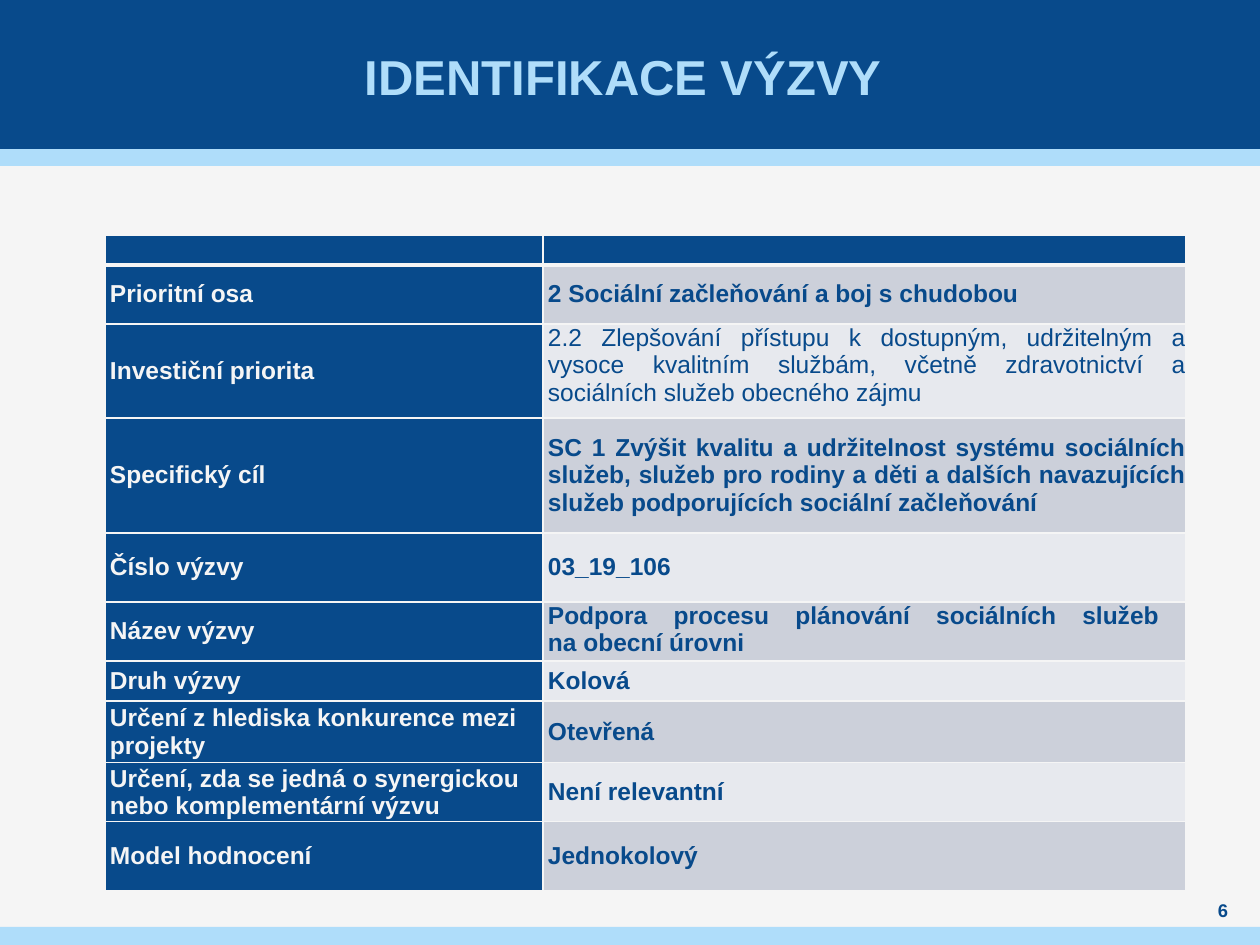
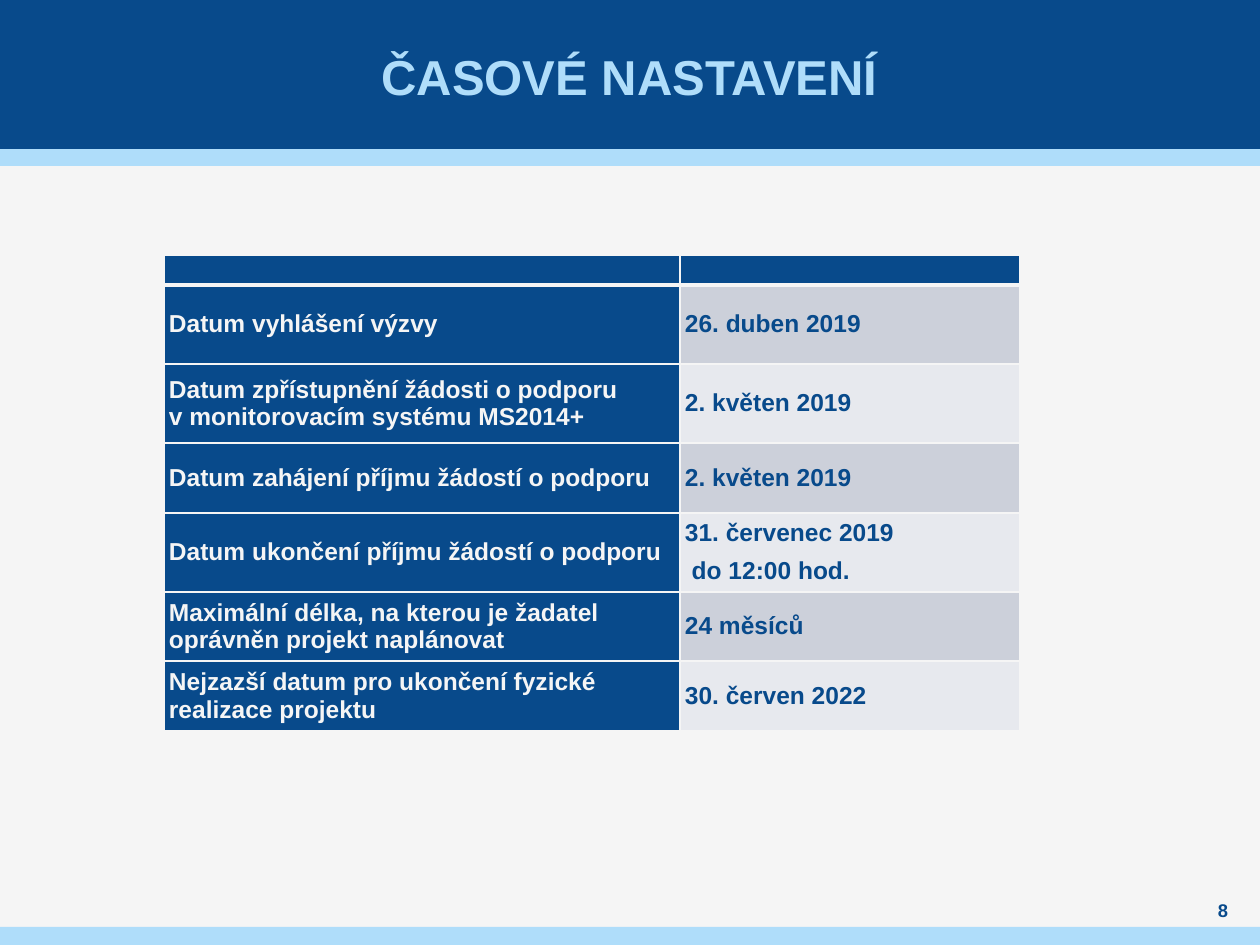
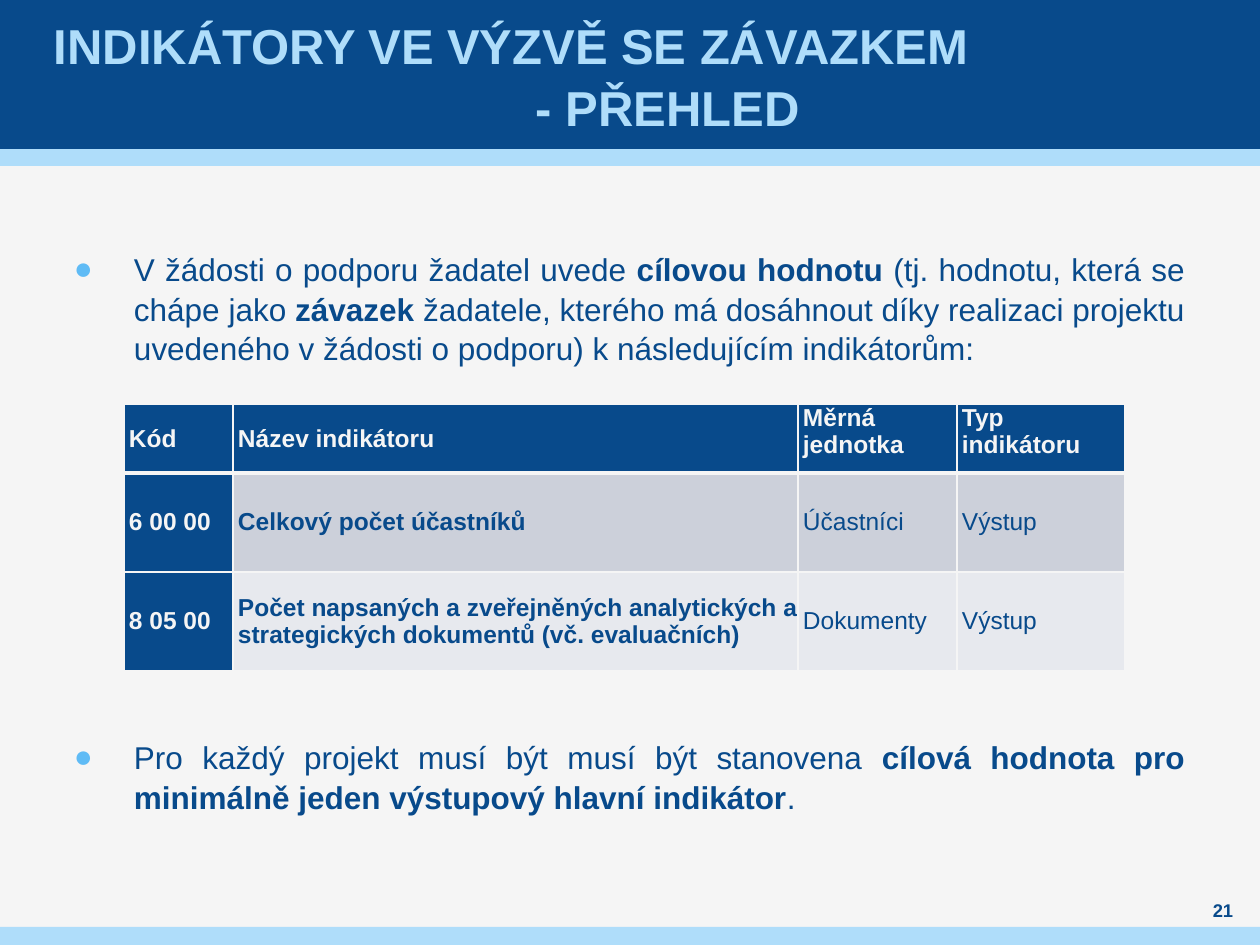
from collections import namedtuple
from dataclasses import dataclass

from lxml.etree import SubElement
from pptx import Presentation
from pptx.dml.color import RGBColor
from pptx.enum.shapes import MSO_SHAPE
from pptx.enum.text import MSO_ANCHOR, PP_ALIGN
from pptx.oxml.ns import qn
from pptx.util import Emu, Pt


@dataclass(frozen=True)
class Theme:
    font: str = "Arial"
    paper: str = "F5F5F5"
    navy: str = "084A8B"
    sky: str = "AFDDFA"
    dot: str = "5FBBF5"
    odd: str = "CCD0DA"
    even: str = "E7E9EE"
    title: float = 28
    body: float = 18
    cell: float = 14
    number: float = 10.5
    thin: float = 1
    thick: float = 3
    lead: float = 1.05


T = Theme()
WIDE, HIGH = 1260, 945
Cell = namedtuple("Cell", "text bold top just", defaults=(True, False, False))

# Content: title lines are (text, indent); None centres the line
SLIDES = [
    {
        "title": [("IDENTIFIKACE VÝZVY ", None)],
        "number": "6",
        "table": {
            "at": (105, 235),
            "cols": [438, 643],
            "rows": [30, 59, 94, 115, 69, 59, 40, 62, 59, 69],
            "cells": [
                ["", ""],
                ["Prioritní osa",
                 Cell("2 Sociální začleňování a boj s chudobou", just=True)],
                ["Investiční priorita",
                 Cell("2.2 Zlepšování přístupu k dostupným, udržitelným "
                      "a vysoce kvalitním službám, včetně zdravotnictví "
                      "a sociálních služeb obecného zájmu",
                      bold=False, top=True, just=True)],
                ["Specifický cíl",
                 Cell("SC 1 Zvýšit kvalitu a udržitelnost systému sociálních "
                      "služeb, služeb pro rodiny a děti a dalších navazujících "
                      "služeb podporujících sociální začleňování", just=True)],
                ["Číslo výzvy", Cell("03_19_106", just=True)],
                ["Název výzvy",
                 Cell("Podpora procesu plánování sociálních služeb \v"
                      "na obecní úrovni ", top=True, just=True)],
                ["Druh výzvy", "Kolová"],
                ["Určení z hlediska konkurence mezi projekty", "Otevřená"],
                ["Určení, zda se jedná o synergickou nebo komplementární výzvu",
                 "Není relevantní"],
                ["Model hodnocení", "Jednokolový"],
            ],
        },
    },
    {
        "title": [("ČASOVÉ NASTAVENÍ", None)],
        "number": "8",
        "table": {
            "at": (164, 255),
            "cols": [516, 340],
            "rows": [30, 79, 79, 70, 79, 69, 70],
            "cells": [
                ["", ""],
                ["Datum vyhlášení výzvy", "26. duben 2019"],
                ["Datum zpřístupnění žádosti o podporu \v"
                 "v monitorovacím systému MS2014+", "2. květen 2019"],
                ["Datum zahájení příjmu žádostí o podporu", "2. květen 2019"],
                ["Datum ukončení příjmu žádostí o podporu",
                 "31. červenec 2019\n do 12:00 hod."],
                ["Maximální délka, na kterou je žadatel oprávněn projekt "
                 "naplánovat", "24 měsíců"],
                ["Nejzazší datum pro ukončení fyzické realizace projektu",
                 "30. červen 2022"],
            ],
        },
    },
    {
        "title": [("INDIKÁTORY VE VÝZVĚ SE ZÁVAZKEM", 0), ("- PŘEHLED", 482)],
        "number": "21",
        "table": {
            "at": (124, 404),
            "cols": [109, 565, 159, 168],
            "rows": [69, 99, 99],
            "cells": [
                ["Kód", "Název indikátoru", Cell("Měrná jednotka", top=True),
                 Cell("Typ indikátoru", top=True)],
                ["6 00 00", "Celkový počet účastníků",
                 Cell("Účastníci", bold=False), Cell("Výstup", bold=False)],
                ["8 05 00", "Počet napsaných a zveřejněných analytických "
                 "a strategických dokumentů (vč. evaluačních)",
                 Cell("Dokumenty", bold=False), Cell("Výstup", bold=False)],
            ],
        },
        # Bullets: top, height, runs of (text, bold)
        "points": [
            (248, 120, [
                ("V žádosti o podporu žadatel uvede ", False),
                ("cílovou hodnotu ", True),
                ("(tj. hodnotu, která se chápe jako ", False),
                ("závazek", True),
                (" žadatele, kterého má dosáhnout díky realizaci projektu "
                 "uvedeného v žádosti o podporu) k následujícím indikátorům:",
                 False)]),
            (736, 80, [
                ("Pro každý projekt musí být musí být stanovena ", False),
                ("cílová hodnota pro minimálně jeden výstupový hlavní "
                 "indikátor", True),
                (".", False)]),
        ],
    },
]


def px(n):
    return Emu(round(n * 914400 / 126))


def rgb(code):
    return RGBColor.from_string(code)


def style(para, size, color, bold=None):
    font = para.font
    font.name, font.size, font.bold = T.font, Pt(size), bold
    font.color.rgb = rgb(color)


def band(slide, top, height, color):
    bar = slide.shapes.add_shape(
        MSO_SHAPE.RECTANGLE, 0, px(top), px(WIDE), px(height))
    bar.shadow.inherit = False
    bar.fill.solid()
    bar.fill.fore_color.rgb = rgb(color)
    bar.line.fill.background()


def textbox(slide, box, pad=0, anchor=MSO_ANCHOR.MIDDLE):
    frame = slide.shapes.add_textbox(*map(px, box)).text_frame
    frame.word_wrap = True
    frame.vertical_anchor = anchor
    frame.margin_left = frame.margin_right = px(pad)
    frame.margin_top = frame.margin_bottom = 0
    return frame


# Bands, title and page number
def add_base(deck, title, number):
    slide = deck.slides.add_slide(deck.slide_layouts[6])
    slide.background.fill.solid()
    slide.background.fill.fore_color.rgb = rgb(T.paper)
    band(slide, 149, 17, T.sky)
    band(slide, 0, 149, T.navy)
    band(slide, 927, HIGH - 927, T.sky)

    frame = textbox(slide, (49, 0, 1161, 149), 5)
    for i, (text, indent) in enumerate(title):
        para = frame.add_paragraph() if i else frame.paragraphs[0]
        para.text = text
        para.line_spacing = T.lead
        if indent is None:
            para.alignment = PP_ALIGN.CENTER
        else:
            para.alignment = PP_ALIGN.LEFT
            para._p.get_or_add_pPr().set("marL", str(px(indent)))
        style(para, T.title, T.sky, True)

    para = textbox(slide, (1191, 898, 64, 25)).paragraphs[0]
    para.text = number
    para.alignment = PP_ALIGN.CENTER
    style(para, T.number, T.navy, True)
    return slide


def add_point(slide, top, height, runs):
    box = (74, top, 1111, height)
    para = textbox(slide, box, anchor=MSO_ANCHOR.TOP).paragraphs[0]
    para.alignment = PP_ALIGN.JUSTIFY
    para.line_spacing = T.lead
    props = para._p.get_or_add_pPr()
    props.set("marL", str(px(60)))
    props.set("indent", str(px(-60)))
    tint = SubElement(props, qn("a:buClr"))
    SubElement(tint, qn("a:srgbClr"), val=T.dot)
    SubElement(props, qn("a:buFont"), typeface=T.font)
    SubElement(props, qn("a:buChar"), char="●")
    style(para, T.body, T.navy)
    for text, bold in runs:
        run = para.add_run()
        run.text = text
        run.font.bold = bold


def add_edges(cell, row):
    props = cell._tc.get_or_add_tcPr()
    for side in "LRTB":
        heavy = (row, side) in ((0, "B"), (1, "T"))
        width = Pt(T.thick if heavy else T.thin)
        line = SubElement(props, qn(f"a:ln{side}"), w=str(width))
        fill = SubElement(line, qn("a:solidFill"))
        SubElement(fill, qn("a:srgbClr"), val=T.paper)


def fill_cell(cell, item, row, col):
    if isinstance(item, str):
        item = Cell(item)
    head = row == 0 or col == 0
    add_edges(cell, row)
    cell.fill.solid()
    shade = T.navy if head else T.odd if row % 2 else T.even
    cell.fill.fore_color.rgb = rgb(shade)
    cell.margin_left = px(5)
    cell.margin_right = cell.margin_top = cell.margin_bottom = 0
    cell.vertical_anchor = MSO_ANCHOR.TOP if item.top else MSO_ANCHOR.MIDDLE
    cell.text_frame.text = item.text
    for para in cell.text_frame.paragraphs:
        if not item.text:
            # An empty cell takes its height from the end mark
            SubElement(para._p, qn("a:endParaRPr"), sz=str(T.cell * 100))
            continue
        para.alignment = PP_ALIGN.JUSTIFY if item.just else PP_ALIGN.LEFT
        para.space_before = para.space_after = Pt(3)
        style(para, T.cell, T.paper if head else T.navy, item.bold)


def add_grid(slide, at, cols, rows, cells):
    table = slide.shapes.add_table(
        len(rows), len(cols), *map(px, (*at, sum(cols), sum(rows)))).table
    table.first_row = table.horz_banding = False
    for col, width in zip(table.columns, cols):
        col.width = px(width)
    for r, (height, items) in enumerate(zip(rows, cells)):
        table.rows[r].height = px(height)
        for c, item in enumerate(items):
            fill_cell(table.cell(r, c), item, r, c)


def main():
    deck = Presentation()
    deck.slide_width, deck.slide_height = px(WIDE), px(HIGH)
    for data in SLIDES:
        slide = add_base(deck, data["title"], data["number"])
        for point in data.get("points", []):
            add_point(slide, *point)
        add_grid(slide, **data["table"])
    deck.save("out.pptx")


if __name__ == "__main__":
    main()
